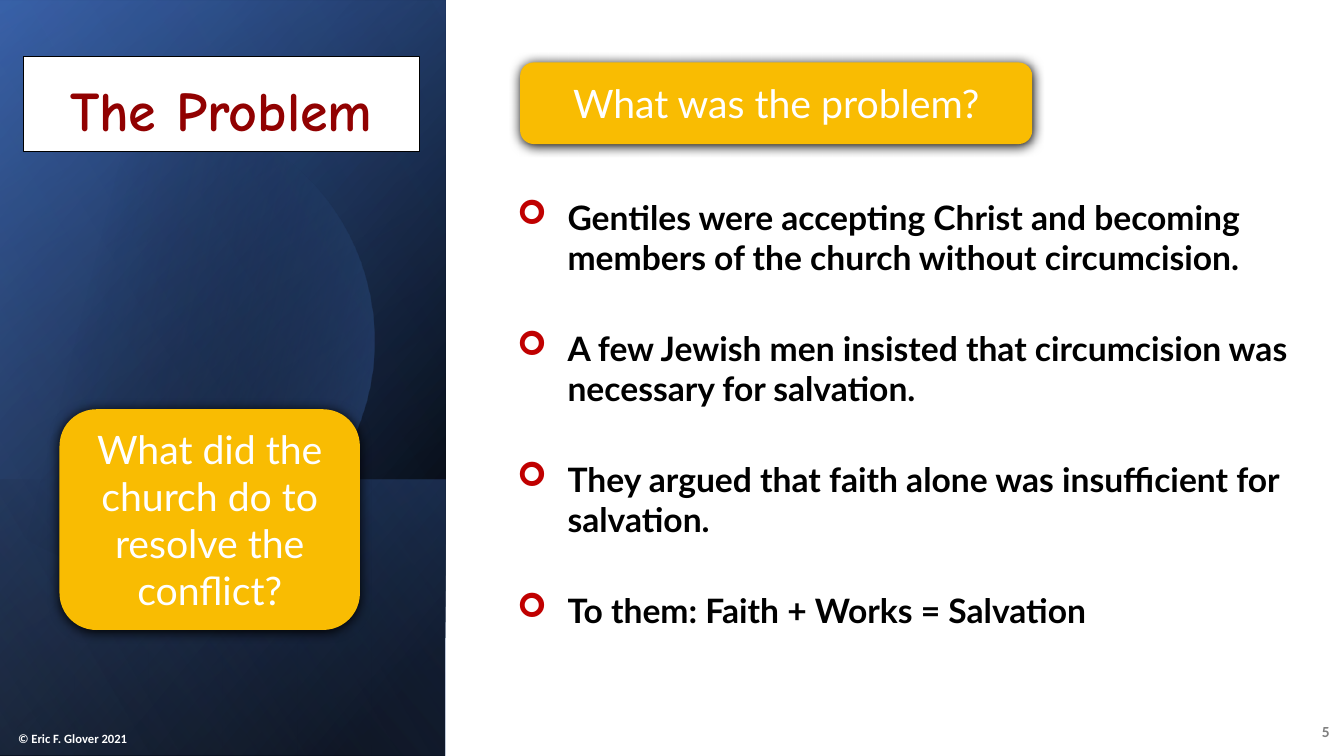
"""Build the slide "The Problem": a blue side panel and a list of four points."""
from lxml import etree
from pptx import Presentation
from pptx.dml.color import RGBColor
from pptx.enum import shapes, text
from pptx.oxml import ns, parse_xml
from pptx.util import Pt

A = ns.nsdecls("a")


def rgb(code):
    return RGBColor.from_string(code)


def write(p, words, size, font, color, bold=False):
    r = p.add_run()
    r.text = words
    r.font.size, r.font.name, r.font.bold = Pt(size), font, bold
    r.font.color.rgb = rgb(color)


prs = Presentation()
prs.slide_width, prs.slide_height = Pt(960), Pt(540)
slide = prs.slides.add_slide(prs.slide_layouts[1])
slide.background.fill.solid()
slide.background.fill.fore_color.rgb = rgb("FFFFFF")
tree = slide.shapes

# (centre y, panel height, angle, stops as position, colour, opacity)
PANEL_W = 318.24
panels = [
    (270, 540, 50, [(8, "000000", 100), (100, "2F5597", 100)]),
    (270.7, 540, 30, [(0, "000000", 0), (99, "4472C4", 46)]),
    (441.4, 197.3, 130, [(2, "4472C4", 29), (100, "000000", 30)]),
    (None, None, 13.9, [(29, "000000", 0), (100, "4472C4", 43)]),
    (269.3, 540, 120, [(0, "000000", 0), (99, "8FAADC", 11)]),
]
moon_curves = [
    [(1.49, 1.1), (2.46, 1.12), (3.35, 1.77), (3.63, 2.75)],
    [(3.63, 2.75), (3.98, 3.97), (3.28, 5.23), (2.07, 5.58)],
    [(2.07, 5.58), (1.31, 5.8), (0.53, 5.61), (-0.03, 5.14)],
    [(-0.15, 5.03), (-0.15, 3.94), (-0.15, 2.84), (-0.15, 1.75)],
    [(0, 1.61), (0.23, 1.42), (0.5, 1.28), (0.8, 1.19)],
    [(0.8, 1.19), (1.03, 1.13), (1.26, 1.1), (1.49, 1.1)],
]
moon = []
for a, b, c, d in moon_curves:
    for i in range(21):
        t = i / 20
        weights = ((1 - t) ** 3, 3 * t * (1 - t) ** 2, 3 * t * t * (1 - t), t ** 3)
        moon.append(tuple(Pt(72 * sum(w * v for w, v in zip(weights, axis)))
                          for axis in zip(a, b, c, d)))

for middle, height, angle, stops in panels:
    if middle is None:
        builder = tree.build_freeform(*moon[0])
        builder.add_line_segments(moon[1:], close=True)
        sp = builder.convert_to_shape()
    else:
        sp = tree.add_shape(shapes.MSO_SHAPE.RECTANGLE, Pt((PANEL_W - height) / 2),
                            Pt(middle - PANEL_W / 2), Pt(height), Pt(PANEL_W))
        sp.rotation = 90
        sp._element.spPr.find(ns.qn("a:xfrm")).set("flipH", "1")
    sp.shadow.inherit = False
    sp.line.fill.background()
    marks = "".join(
        f'<a:gs pos="{pos * 1000}"><a:srgbClr val="{color}">'
        f'<a:alpha val="{alpha * 1000}"/></a:srgbClr></a:gs>' for pos, color, alpha in stops)
    gradient = parse_xml(f'<a:gradFill {A} rotWithShape="1"><a:gsLst>{marks}</a:gsLst>'
                         f'<a:lin ang="{int(angle * 60000)}" scaled="0"/></a:gradFill>')
    sp._element.spPr.find(ns.qn("a:ln")).addprevious(gradient)

title = tree.title
title.left, title.top, title.width, title.height = Pt(16.6), Pt(40.3), Pt(283), Pt(67.7)
title._element.spPr.append(parse_xml(
    f'<a:prstGeom {A} prst="roundRect"><a:avLst/></a:prstGeom>'))
title.fill.solid()
title.fill.fore_color.rgb = rgb("FFFFFF")
title.line.color.rgb = rgb("000000")
title.line.width = Pt(0.75)
tf = title.text_frame
tf.auto_size = text.MSO_AUTO_SIZE.NONE
tf.vertical_anchor = text.MSO_ANCHOR.MIDDLE
tf.margin_top, tf.margin_bottom = Pt(7.2), Pt(0)
p = tf.paragraphs[0]
p.alignment, p.space_after = text.PP_ALIGN.CENTER, Pt(6)
write(p, "The Problem", 40, "Comic Neue", "910101", True)
tree._spTree.append(title._element)

labels = [
    (921.6, 508.3, 35.3, 28.8, "5", 11, "808080", text.PP_ALIGN.RIGHT, text.MSO_ANCHOR.MIDDLE, 6),
    (5.8, 516.2, 113, 20.2, "© Eric F. Glover 2021", 9, "FFFFFF", text.PP_ALIGN.LEFT,
     text.MSO_ANCHOR.BOTTOM, 0),
]
for x, y, w, h, words, size, color, align, anchor, after in labels:
    tf = tree.add_textbox(Pt(x), Pt(y), Pt(w), Pt(h)).text_frame
    tf.word_wrap, tf.vertical_anchor = True, anchor
    p = tf.paragraphs[0]
    p.alignment, p.space_after = align, Pt(after)
    write(p, words, size, "Calibri", color, True)

body = slide.placeholders[1]
body.left, body.top, body.width, body.height = Pt(362.2), Pt(136.8), Pt(568.8), Pt(319.7)
tree._spTree.append(body._element)
tf = body.text_frame
tf.auto_size = text.MSO_AUTO_SIZE.NONE
points = [
    "Gentiles were accepting Christ and becoming members of the church without circumcision.",
    "A few Jewish men insisted that circumcision was necessary for salvation.",
    "They argued that faith alone was insufficient for salvation.",
    "To them: Faith + Works = Salvation",
]
for i, point in enumerate(points):
    p = tf.add_paragraph() if i else tf.paragraphs[0]
    p.space_before, p.space_after = Pt(0), Pt(36)
    pPr = p._p.get_or_add_pPr()
    pPr.set("marL", str(Pt(36)))
    pPr.set("indent", str(-Pt(36)))
    color = etree.SubElement(pPr, ns.qn("a:buClr"))
    etree.SubElement(color, ns.qn("a:srgbClr"), val="C00000")
    etree.SubElement(pPr, ns.qn("a:buFont"), typeface="Wingdings")
    etree.SubElement(pPr, ns.qn("a:buChar"), char="➢")
    write(p, point, 24, "Lato", "000000", True)

questions = [
    (371.5, 44.6, 365.8, 58.3, "What was the problem?"),
    (42.5, 292.3, 214.6, 157.7, "What did the church do to resolve the conflict?"),
]
for x, y, w, h, question in questions:
    sp = tree.add_shape(shapes.MSO_SHAPE.ROUNDED_RECTANGLE, Pt(x), Pt(y), Pt(w), Pt(h))
    sp.fill.solid()
    sp.fill.fore_color.rgb = rgb("F9BC02")
    sp.line.fill.background()
    sp._element.spPr.append(parse_xml(
        f'<a:effectLst {A}><a:outerShdw blurRad="{Pt(8.5)}" dist="{Pt(1)}" dir="5400000" '
        'algn="t" rotWithShape="0"><a:srgbClr val="000000"/></a:outerShdw></a:effectLst>'))
    tf = sp.text_frame
    tf.word_wrap, tf.vertical_anchor = True, text.MSO_ANCHOR.MIDDLE
    p = tf.paragraphs[0]
    p.alignment = text.PP_ALIGN.CENTER
    write(p, question, 28, "Lato", "FFFFFF")

prs.save("out.pptx")
